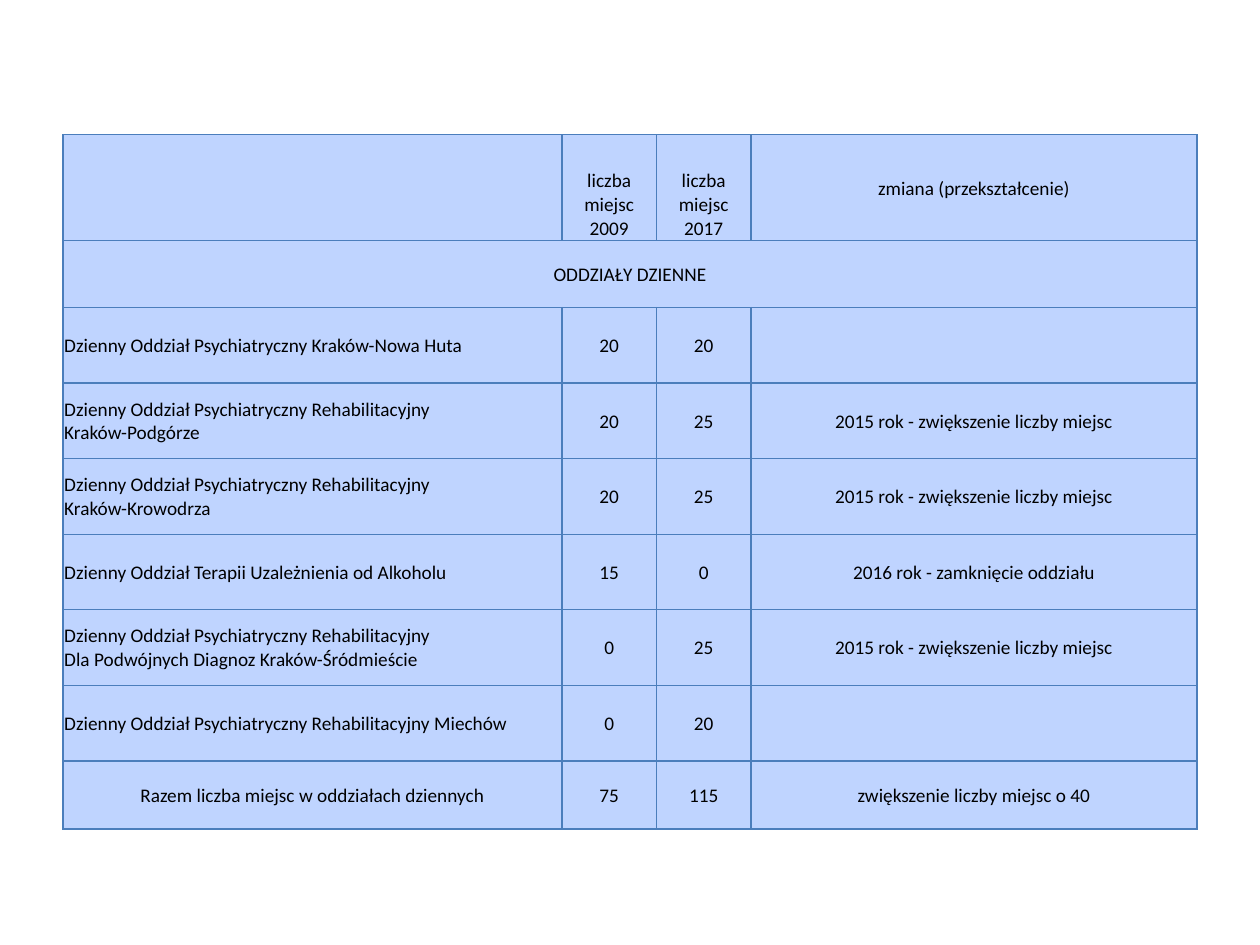
from lxml.etree import SubElement
from pptx import Presentation
from pptx.dml.color import RGBColor
from pptx.enum.text import MSO_ANCHOR, PP_ALIGN
from pptx.oxml.ns import qn
from pptx.util import Inches, Pt

CELL_BLUE = RGBColor(0xBF, 0xD4, 0xFF)
BORDER_BLUE = RGBColor(0x4B, 0x7E, 0xBC)
BLACK = RGBColor(0, 0, 0)

COLUMN_WIDTHS = [3.96, 0.75, 0.75, 3.54]
HEADER_HEIGHT, SECTION_HEIGHT, WARD_HEIGHT, TOTAL_HEIGHT = 0.84, 0.53, 0.6, 0.54

HEADINGS = ("", "liczba miejsc\v2009", "liczba miejsc\v2017", "zmiana (przekształcenie)")
SECTION = ("ODDZIAŁY DZIENNE", "", "", "")
MORE_PLACES = "2015 rok - zwiększenie liczby miejsc"
WARDS = [
    ("Dzienny Oddział Psychiatryczny Kraków-Nowa Huta", "20", "20", ""),
    ("Dzienny Oddział Psychiatryczny Rehabilitacyjny \vKraków-Podgórze", "20", "25", MORE_PLACES),
    ("Dzienny Oddział Psychiatryczny Rehabilitacyjny \vKraków-Krowodrza", "20", "25", MORE_PLACES),
    ("Dzienny Oddział Terapii Uzależnienia od Alkoholu", "15", "0", "2016 rok - zamknięcie oddziału"),
    ("Dzienny Oddział Psychiatryczny Rehabilitacyjny \vDla Podwójnych Diagnoz Kraków-Śródmieście",
     "0", "25", MORE_PLACES),
    ("Dzienny Oddział Psychiatryczny Rehabilitacyjny Miechów", "0", "20", ""),
]
TOTALS = ("Razem liczba miejsc w oddziałach dziennych", "75", "115", "zwiększenie liczby miejsc o 40")


def add_borders(cell):
    properties = cell._tc.get_or_add_tcPr()
    for position, side in enumerate(("a:lnL", "a:lnR", "a:lnT", "a:lnB")):
        line = SubElement(properties, qn(side), w=str(Pt(0.75)))
        properties.insert(position, line)  # borders precede the fill
        fill = SubElement(line, qn("a:solidFill"))
        SubElement(fill, qn("a:srgbClr"), val=str(BORDER_BLUE))


def fill_cell(cell, text, align, anchor):
    cell.fill.solid()
    cell.fill.fore_color.rgb = CELL_BLUE
    add_borders(cell)
    cell.margin_left = cell.margin_right = cell.margin_top = Inches(0.01)
    cell.margin_bottom = 0
    cell.vertical_anchor = anchor
    paragraph = cell.text_frame.paragraphs[0]
    paragraph.text = text
    paragraph.alignment = align
    paragraph.font.name = "Calibri"
    paragraph.font.size = Pt(11)
    paragraph.font.color.rgb = BLACK


def add_wards_table(slide, left, top):
    rows = [HEADINGS, SECTION, *WARDS, TOTALS]
    heights = [HEADER_HEIGHT, SECTION_HEIGHT, *[WARD_HEIGHT] * len(WARDS), TOTAL_HEIGHT]
    table = slide.shapes.add_table(
        len(rows), len(COLUMN_WIDTHS), left, top,
        Inches(sum(COLUMN_WIDTHS)), Inches(sum(heights))).table
    table.first_row = table.horz_banding = False
    for column, width in zip(table.columns, COLUMN_WIDTHS):
        column.width = Inches(width)
    for row, height, texts in zip(table.rows, heights, rows):
        row.height = Inches(height)
        for index, (cell, text) in enumerate(zip(row.cells, texts)):
            is_ward_name = texts in WARDS and index == 0
            is_year_heading = texts is HEADINGS and index in (1, 2)
            fill_cell(cell, text,
                      PP_ALIGN.LEFT if is_ward_name else PP_ALIGN.CENTER,
                      MSO_ANCHOR.BOTTOM if is_year_heading else MSO_ANCHOR.MIDDLE)
    table.cell(1, 0).merge(table.cell(1, len(COLUMN_WIDTHS) - 1))


def main():
    presentation = Presentation()
    presentation.slide_width = Inches(10)
    presentation.slide_height = Inches(7.5)
    slide = presentation.slides.add_slide(presentation.slide_layouts[6])
    add_wards_table(slide, Inches(0.5), Inches(1.07))
    presentation.save("out.pptx")


if __name__ == "__main__":
    main()
